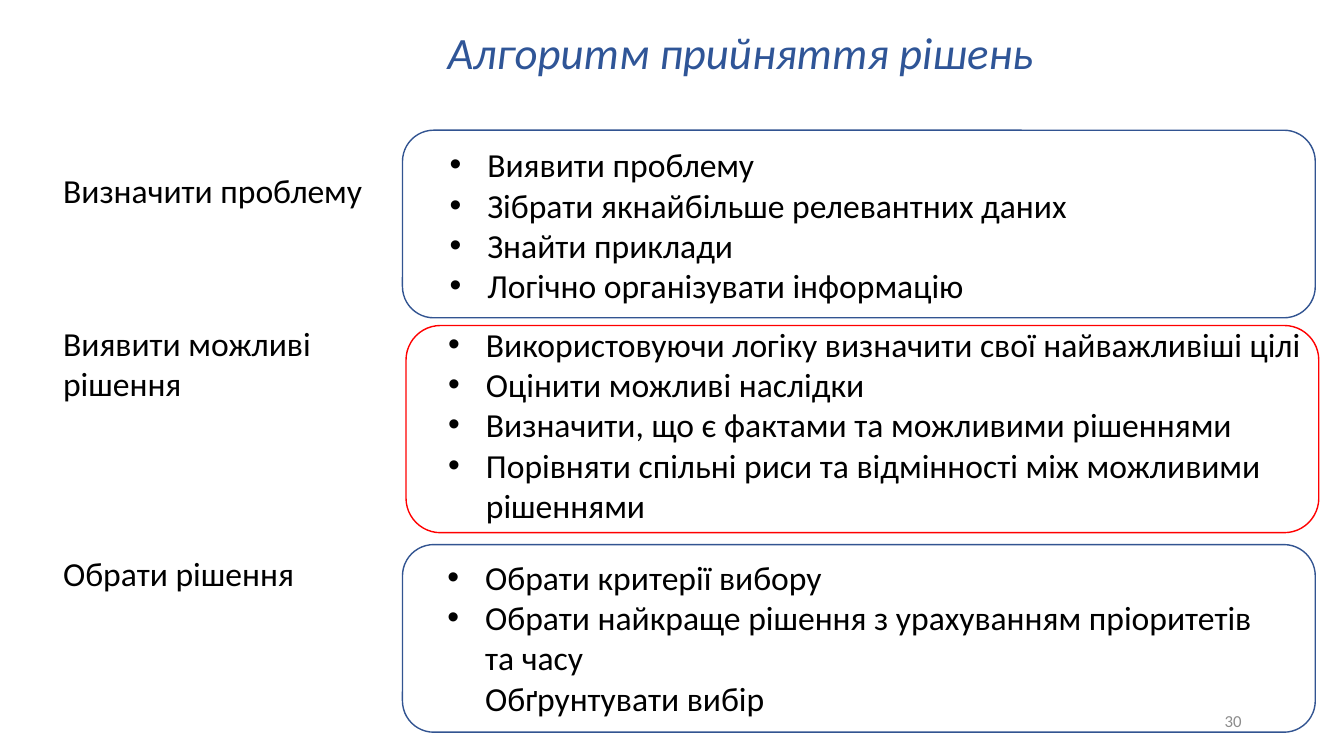
from lxml.etree import SubElement
from pptx import Presentation
from pptx.dml.color import RGBColor
from pptx.enum.shapes import MSO_SHAPE
from pptx.enum.text import MSO_ANCHOR, MSO_AUTO_SIZE, PP_ALIGN
from pptx.oxml.ns import qn
from pptx.util import Pt

BLACK = RGBColor(0x00, 0x00, 0x00)
TITLE_BLUE = RGBColor(0x2F, 0x55, 0x97)
FRAME_BLUE = RGBColor(0x32, 0x54, 0x91)
FRAME_RED = RGBColor(0xFF, 0x00, 0x00)
GREY = RGBColor(0x8C, 0x8C, 0x8C)
INDENT = Pt(27)

STAGES = [
    {
        "label": ("Визначити проблему", (38, 118, 243, 36)),
        "steps": (
            [
                "Виявити проблему",
                "Зібрати якнайбільше релевантних даних",
                "Знайти приклади",
                "Логічно організувати інформацію",
            ],
            (314, 99.5, 469, 124),
        ),
        "frame": ((287.5, 93, 652, 134), FRAME_BLUE),
    },
    {
        "label": ("Виявити можливі рішення", (38, 227, 252, 65.5)),
        "steps": (
            [
                "Використовуючи логіку визначити свої найважливіші цілі",
                "Оцінити можливі наслідки",
                "Визначити, що є фактами та можливими рішеннями",
                "Порівняти спільні риси та відмінності між можливими рішеннями",
            ],
            (313, 227.5, 652, 153),
        ),
        "frame": ((290, 232.5, 652, 148), FRAME_RED),
    },
    {
        "label": ("Обрати рішення", (38, 391.5, 277, 36)),
        "steps": (
            [
                "Обрати критерії вибору",
                "Обрати найкраще рішення з урахуванням пріоритетів та часу\v"
                "Обґрунтувати вибір",
            ],
            (312.5, 394, 606, 124),
        ),
        "frame": ((287.5, 389, 652, 134), FRAME_BLUE),
    },
]


class SlideBuilder:
    def __init__(self, deck):
        self.page = deck.slides.add_slide(deck.slide_layouts[5])
        self.style = {"name": "Calibri", "size": Pt(24)}

    def format_text(self, para, color, **changes):
        for span in para.runs:
            for name, value in {**self.style, **changes}.items():
                setattr(span.font, name, value)
            span.font.color.rgb = color

    def title(self, text, place):
        box = self.page.shapes.title
        box.left, box.top, box.width, box.height = map(Pt, place)
        frame = box.text_frame
        frame.auto_size = MSO_AUTO_SIZE.NONE
        frame.vertical_anchor = MSO_ANCHOR.MIDDLE
        para = frame.paragraphs[0]
        para.text = text
        para.alignment = PP_ALIGN.LEFT
        para.line_spacing = 0.9
        para.add_line_break()
        self.format_text(para, TITLE_BLUE, size=Pt(32), italic=True)

    def text(self, lines, place, color=BLACK, bullets=False, align=PP_ALIGN.LEFT,
             anchor=MSO_ANCHOR.TOP, **changes):
        box = self.page.shapes.add_textbox(*map(Pt, place))
        frame = box.text_frame
        frame.word_wrap = True
        frame.vertical_anchor = anchor
        for index, line in enumerate(lines):
            para = frame.add_paragraph() if index else frame.paragraphs[0]
            para.text = line
            para.alignment = align
            if bullets:
                self.bullet(para)
            self.format_text(para, color, **changes)

    def bullet(self, para):
        properties = para._p.get_or_add_pPr()
        properties.set("marL", str(INDENT))
        properties.set("indent", str(-INDENT))
        SubElement(properties, qn("a:buFont"), typeface="Arial")
        SubElement(properties, qn("a:buChar"), char="•")

    def frame(self, place, color):
        box = self.page.shapes.add_shape(MSO_SHAPE.ROUNDED_RECTANGLE, *map(Pt, place))
        box.shadow.inherit = False
        box.fill.background()
        box.line.color.rgb = color
        box.line.width = Pt(1)


def main():
    deck = Presentation()
    deck.slide_width, deck.slide_height = Pt(960), Pt(540)
    builder = SlideBuilder(deck)
    builder.title("Алгоритм прийняття рішень", (312.5, 21, 581, 89))
    builder.text(["30"], (678, 500.5, 216, 29), GREY, align=PP_ALIGN.RIGHT,
                 anchor=MSO_ANCHOR.MIDDLE, size=Pt(12))
    for stage in STAGES:
        label, place = stage["label"]
        builder.text([label], place)
    for stage in STAGES:
        steps, place = stage["steps"]
        builder.text(steps, place, bullets=True)
    for stage in STAGES:
        builder.frame(*stage["frame"])
    deck.save("out.pptx")


if __name__ == "__main__":
    main()
